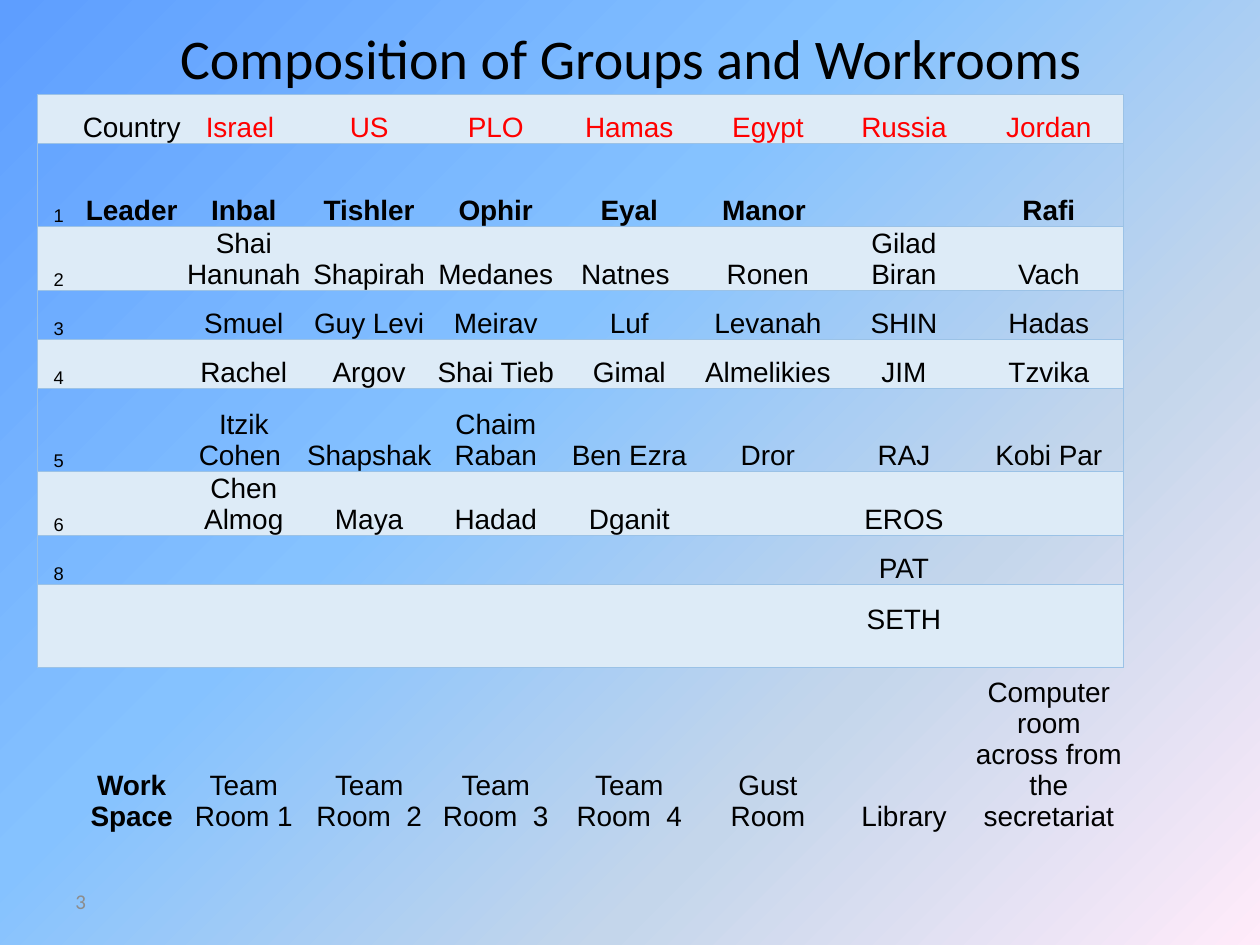
from lxml.etree import SubElement
from pptx import Presentation
from pptx.dml.color import RGBColor
from pptx.enum.text import MSO_ANCHOR as Anchor, PP_ALIGN as Align
from pptx.oxml.ns import qn
from pptx.util import Inches, Pt

BAND, RULE, BLACK, RED, GREY = "DDEBF7", "9BC2E6", "000000", "FF0000", "8C8C8C"
BACKDROP = [(0, "5E9EFF"), (40, "85C2FF"), (70, "C4D6EB"), (100, "FFEBFA")]
PLAIN_STYLE = "{2D5ABB26-0587-4C30-8999-92F81FD0307C}"
COLUMN_WIDTHS = [0.33, 0.83, 0.95, 1.04, 0.97, 1.15, 1.05, 1.11, 1.19, 0.8]
ROW_HEIGHTS = [0.39, 0.66, 0.39, 0.39, 0.39, 0.66, 0.39, 0.39, 0.66, 1.31]
GROUPS = [
    ["", "Country", "Israel ", "US", "PLO", "Hamas", "Egypt", "Russia", "Jordan"],
    ["1", "Leader", "Inbal", "Tishler", "Ophir", "Eyal", "Manor ", "", "Rafi"],
    ["2", "", "Shai Hanunah ", "Shapirah", "Medanes", "Natnes ", "Ronen", "Gilad Biran", "Vach"],
    ["3", "", "Smuel", "Guy Levi", "Meirav", "Luf", "Levanah", "SHIN", "Hadas"],
    ["4", "", "Rachel", "Argov", "Shai Tieb", "Gimal", "Almelikies", "JIM", "Tzvika"],
    ["5", "", "Itzik Cohen ", "Shapshak", "Chaim Raban", "Ben Ezra", "Dror", "RAJ", "Kobi Par"],
    ["6", "", "Chen Almog", "Maya", "Hadad", "Dganit", "", "EROS", ""],
    ["8", "", "", "", "", "", "", "PAT", ""],
    ["", "", "", "", "", "", "", "SETH", ""],
    ["", "Work Space", "Team Room 1", "Team Room  2", "Team Room  3", "Team Room  4",
     "Gust Room", "Library", "Computer room across from the secretariat"],
]
LAST_ROW, LAST_COLUMN = len(GROUPS) - 1, len(GROUPS[0]) - 1


def color(code):
    """Turn a hex string into a colour."""
    return RGBColor.from_string(code)


def write(frame, text, size, font, code=BLACK, bold=False, align=Align.CENTER):
    """Set one formatted paragraph of text."""
    frame.text = text
    para = frame.paragraphs[0]
    para.alignment = align
    for span in para.runs:
        span.font.size, span.font.name, span.font.bold = Pt(size), font, bold
        span.font.color.rgb = color(code)


def paint_background(page):
    """Fill the page with the diagonal gradient."""
    page.background.fill.gradient()
    gradient = next(page.element.iter(qn("a:gradFill")))
    stops = gradient.find(qn("a:gsLst"))
    for stop in list(stops):
        stops.remove(stop)
    for percent, code in BACKDROP:
        stop = SubElement(stops, qn("a:gs"), pos=str(percent * 1000))
        SubElement(stop, qn("a:srgbClr"), val=code)
    gradient.find(qn("a:lin")).set("ang", str(45 * 60000))


def add_title(page, text):
    """Place the title placeholder over the table."""
    title = page.shapes.title
    title.left, title.top = Inches(0.51), Inches(-0.17)
    title.width, title.height = Inches(9), Inches(1.25)
    title.text_frame.vertical_anchor = Anchor.MIDDLE
    write(title.text_frame, text, 32, "Calibri")


def rule_cell(cell, sides):
    """Draw thin borders on the named sides, in L, R, T, B order."""
    properties = cell._tc.get_or_add_tcPr()
    for side in sides:
        line = SubElement(properties, qn(f"a:ln{side}"), w=str(Pt(0.5)))
        fill = SubElement(line, qn("a:solidFill"))
        SubElement(fill, qn("a:srgbClr"), val=RULE)


def border_sides(row, column):
    """List the sides of a cell that carry a rule."""
    if row == LAST_ROW:
        return "T" if column <= LAST_COLUMN else ""
    if column > LAST_COLUMN:
        return "L"
    return {0: "LTB", LAST_COLUMN: "RTB"}.get(column, "TB")


def format_cell(cell, row, column):
    """Fill, border and write one cell of the groups table."""
    inside = column <= LAST_COLUMN
    cell.margin_left = cell.margin_right = cell.margin_top = Inches(0.01)
    cell.margin_bottom = Inches(0.25 if row == LAST_ROW - 1 else 0)
    cell.vertical_anchor = Anchor.BOTTOM
    rule_cell(cell, border_sides(row, column))
    if inside and row % 2 == 0:
        cell.fill.solid()
        cell.fill.fore_color.rgb = color(BAND)
    else:
        cell.fill.background()
    if inside and GROUPS[row][column]:
        write(cell.text_frame, GROUPS[row][column],
              size=16 if column else 10.5, font="Arial",
              code=RED if row == 0 and column > 1 else BLACK,
              bold=(row == 1 and column > 0) or (row == LAST_ROW and column == 1))


def add_groups(page):
    """Build the table of groups and workrooms."""
    frame = page.shapes.add_table(
        len(ROW_HEIGHTS), len(COLUMN_WIDTHS), Inches(0.3), Inches(0.75),
        Inches(sum(COLUMN_WIDTHS)), Inches(sum(ROW_HEIGHTS)))
    table = frame.table
    table.first_row = table.horz_banding = False
    next(frame.element.iter(qn("a:tableStyleId"))).text = PLAIN_STYLE
    for column, width in zip(table.columns, COLUMN_WIDTHS):
        column.width = Inches(width)
    for row, height in zip(table.rows, ROW_HEIGHTS):
        row.height = Inches(height)
    for row in range(len(ROW_HEIGHTS)):
        for column in range(len(COLUMN_WIDTHS)):
            format_cell(table.cell(row, column), row, column)


def add_page_number(page, number):
    """Write the page number at the lower left."""
    box = page.shapes.add_textbox(Inches(0.5), Inches(6.95), Inches(2.33), Inches(0.4))
    box.text_frame.word_wrap = True
    box.text_frame.vertical_anchor = Anchor.MIDDLE
    write(box.text_frame, number, 12, "Calibri", GREY, align=Align.LEFT)


def main():
    """Build and save the deck."""
    deck = Presentation()
    deck.slide_width, deck.slide_height = Inches(10), Inches(7.5)
    page = deck.slides.add_slide(deck.slide_layouts[5])
    paint_background(page)
    add_title(page, "Composition of Groups and Workrooms")
    add_groups(page)
    add_page_number(page, "3")
    deck.save("out.pptx")


if __name__ == "__main__":
    main()
